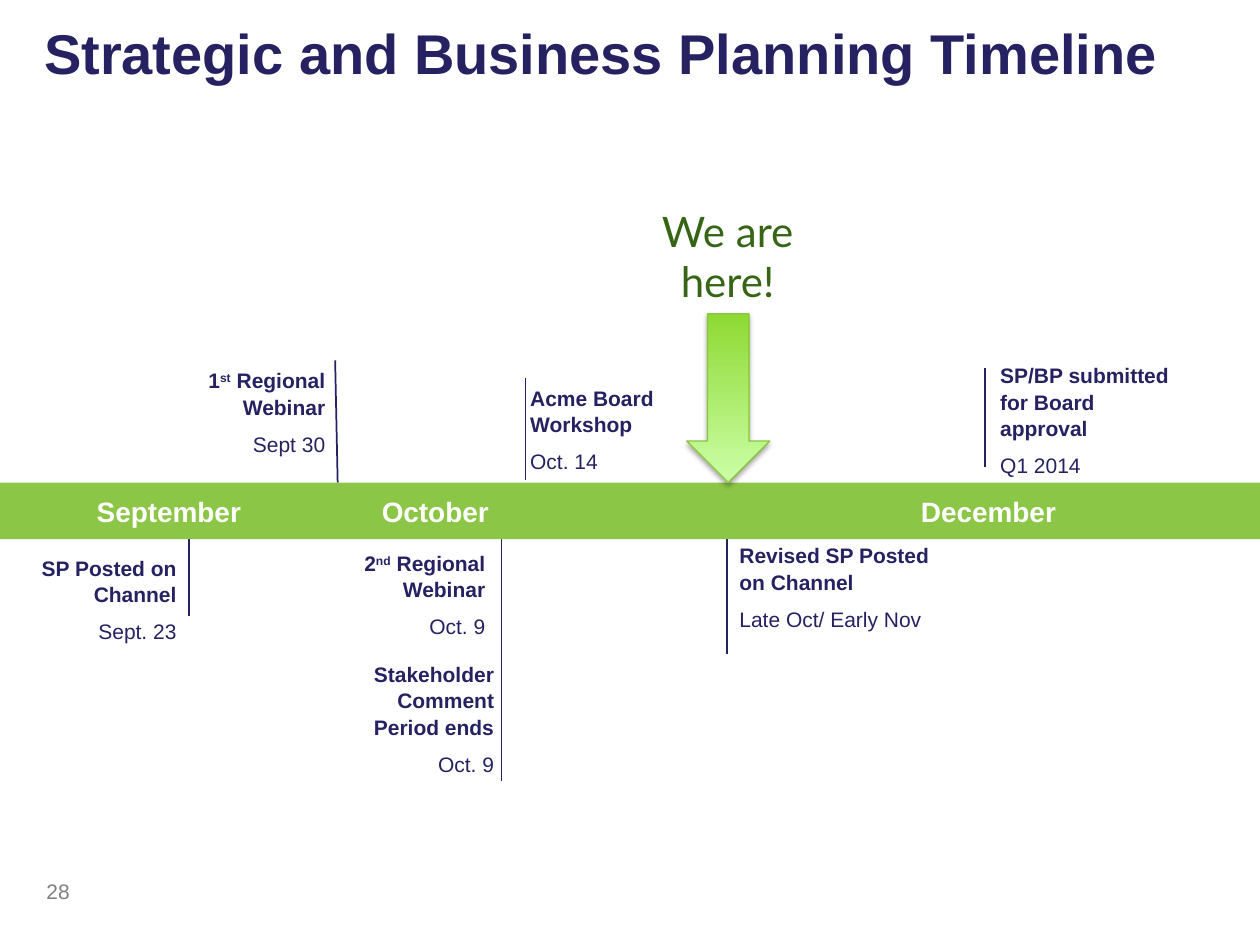
from lxml.etree import SubElement
from pptx import Presentation
from pptx.dml.color import RGBColor
from pptx.enum.shapes import MSO_CONNECTOR, MSO_SHAPE
from pptx.enum.text import MSO_ANCHOR, MSO_AUTO_SIZE, PP_ALIGN
from pptx.oxml.ns import qn
from pptx.util import Inches, Pt

NAVY = RGBColor(0x26, 0x22, 0x62)
GREEN = RGBColor(0x8C, 0xC6, 0x46)
ARROW_EDGE = RGBColor(0x89, 0xC5, 0x41)
ARROW_DARK = RGBColor(0x8E, 0xD9, 0x33)
ARROW_LIGHT = RGBColor(0xCC, 0xFF, 0xA7)
DARK_GREEN = RGBColor(0x37, 0x65, 0x16)
GRAY = RGBColor(0x80, 0x80, 0x80)
WHITE = RGBColor(0xFF, 0xFF, 0xFF)

LEFT, CENTER, RIGHT = PP_ALIGN.LEFT, PP_ALIGN.CENTER, PP_ALIGN.RIGHT

TITLE = "Strategic and Business Planning Timeline"
PAGE_NUMBER = "28"
MARKER = "We are here!"

# name, left, width
MONTHS = [
    ("September", 0.68, 1.32),
    ("October", 2.96, 0.99),
    ("December", 7.27, 1.15),
]
# ordinal (number, suffix) or None, event, date, box, alignment
EVENTS = [
    (("1", "st"), "Regional Webinar", "Sept 30", (1.34, 2.86, 1.34, 0.81), RIGHT),
    (None, "SP Posted on Channel", "Sept. 23", (0.12, 4.35, 1.38, 0.81), RIGHT),
    (("2", "nd"), "Regional Webinar", "Oct. 9", (2.7, 4.31, 1.25, 0.81), RIGHT),
    (None, "Stakeholder Comment Period ends", "Oct. 9", (2.85, 5.19, 1.17, 1.01), RIGHT),
    (None, "Acme Board Workshop", "Oct. 14", (4.11, 3, 1.23, 0.81), LEFT),
    (None, "Revised SP Posted on Channel", "Late Oct/ Early Nov", (5.77, 4.25, 1.82, 0.81), LEFT),
    (None, "SP/BP submitted for Board approval", "Q1 2014", (7.84, 2.82, 1.66, 1.01), LEFT),
]
# x and y of the start, x and y of the end
EVENT_LINES = [
    (1.5, 4.28, 1.5, 4.89),
    (2.66, 2.86, 2.68, 3.83),
    (3.98, 4.22, 3.98, 6.2),
    (4.17, 3, 4.17, 3.81),
    (5.77, 4.25, 5.77, 5.19),
    (7.82, 2.92, 7.82, 3.71),
]
BAND_TOP, BAND_HEIGHT, MONTH_HEIGHT = 3.83, 0.45, 0.27


def inches(values):
    return [Inches(value) for value in values]


def add_run(paragraph, text, *, size=12, color=NAVY, bold=False, font="Arial", raised=False):
    run = paragraph.add_run()
    run.text = text
    run.font.size = Pt(size)
    run.font.color.rgb = color
    run.font.bold = bold
    run.font.name = font
    if raised:
        run.font._element.set("baseline", "30000")


def add_text_frame(slide, box, inset=None, anchor=MSO_ANCHOR.TOP):
    frame = slide.shapes.add_textbox(*inches(box)).text_frame
    frame.word_wrap = True
    frame.vertical_anchor = anchor
    if inset is not None:
        frame.margin_left = frame.margin_right = Inches(inset)
        frame.margin_top = frame.margin_bottom = Inches(inset)
    return frame


def add_label(slide, text, box, *, align=LEFT, inset=None, anchor=MSO_ANCHOR.TOP, **style):
    paragraph = add_text_frame(slide, box, inset, anchor).paragraphs[0]
    paragraph.alignment = align
    add_run(paragraph, text, **style)


def add_event(slide, ordinal, event, date, box, align):
    frame = add_text_frame(slide, box)
    heading, when = frame.paragraphs[0], frame.add_paragraph()
    for paragraph in (heading, when):
        paragraph.alignment = align
        paragraph.line_spacing = 1.05
    when.space_before = Pt(6)
    if ordinal:
        number, suffix = ordinal
        add_run(heading, number, bold=True)
        add_run(heading, suffix, bold=True, raised=True)
        event = " " + event
    add_run(heading, event, bold=True)
    add_run(when, date)


def add_event_line(slide, ends):
    line = slide.shapes.add_connector(MSO_CONNECTOR.STRAIGHT, *inches(ends))
    line.line.color.rgb = NAVY
    line.line.width = Pt(1)
    SubElement(line._element.spPr, qn("a:effectLst"))


def add_marker_arrow(slide):
    arrow = slide.shapes.add_shape(MSO_SHAPE.UP_ARROW, *inches((5.45, 2.49, 0.66, 1.34)))
    arrow.rotation = 180
    arrow.fill.gradient()
    arrow.fill.gradient_angle = 90
    for stop, color, position in zip(
        arrow.fill.gradient_stops, (ARROW_DARK, ARROW_LIGHT), (0, 1)
    ):
        stop.color.rgb = color
        stop.position = position
    arrow.line.color.rgb = ARROW_EDGE
    arrow.line.width = Pt(0.75)
    effects = SubElement(arrow._element.spPr, qn("a:effectLst"))
    shadow = SubElement(
        effects, qn("a:outerShdw"), blurRad=str(Pt(3.1)), dist=str(Pt(1.8)),
        dir="5400000", rotWithShape="0",
    )
    shade = SubElement(shadow, qn("a:srgbClr"), val="000000")
    SubElement(shade, qn("a:alpha"), val="35000")


def add_title(slide):
    title = slide.shapes.title
    title.left, title.top, title.width, title.height = inches((0.25, 0, 9.75, 0.82))
    frame = title.text_frame
    frame.auto_size = MSO_AUTO_SIZE.NONE
    frame.vertical_anchor = MSO_ANCHOR.MIDDLE
    frame.margin_right = 0
    frame.paragraphs[0].alignment = LEFT
    add_run(frame.paragraphs[0], TITLE, size=32, bold=True)


def main():
    presentation = Presentation()
    presentation.slide_width, presentation.slide_height = Inches(10), Inches(7.5)
    slide = presentation.slides.add_slide(presentation.slide_layouts[5])

    add_title(slide)
    add_label(slide, PAGE_NUMBER, (0.27, 6.92, 2.08, 0.33), color=GRAY)

    for ends in EVENT_LINES:
        add_event_line(slide, ends)

    band = slide.shapes.add_shape(
        MSO_SHAPE.RECTANGLE, *inches((0, BAND_TOP, 10, BAND_HEIGHT))
    )
    band.shadow.inherit = False
    band.fill.solid()
    band.fill.fore_color.rgb = GREEN
    band.line.fill.background()

    month_top = BAND_TOP + (BAND_HEIGHT - MONTH_HEIGHT) / 2
    for month, left, width in MONTHS:
        add_label(
            slide, month, (left, month_top, width, MONTH_HEIGHT), align=CENTER,
            inset=0, anchor=MSO_ANCHOR.MIDDLE, size=16, color=WHITE, bold=True,
        )
    for event in EVENTS:
        add_event(slide, *event)

    add_marker_arrow(slide)
    add_label(
        slide, MARKER, (4.76, 1.58, 2.03, 0.5), align=CENTER,
        size=24, color=DARK_GREEN, font="Lato",
    )
    presentation.save("out.pptx")


if __name__ == "__main__":
    main()
